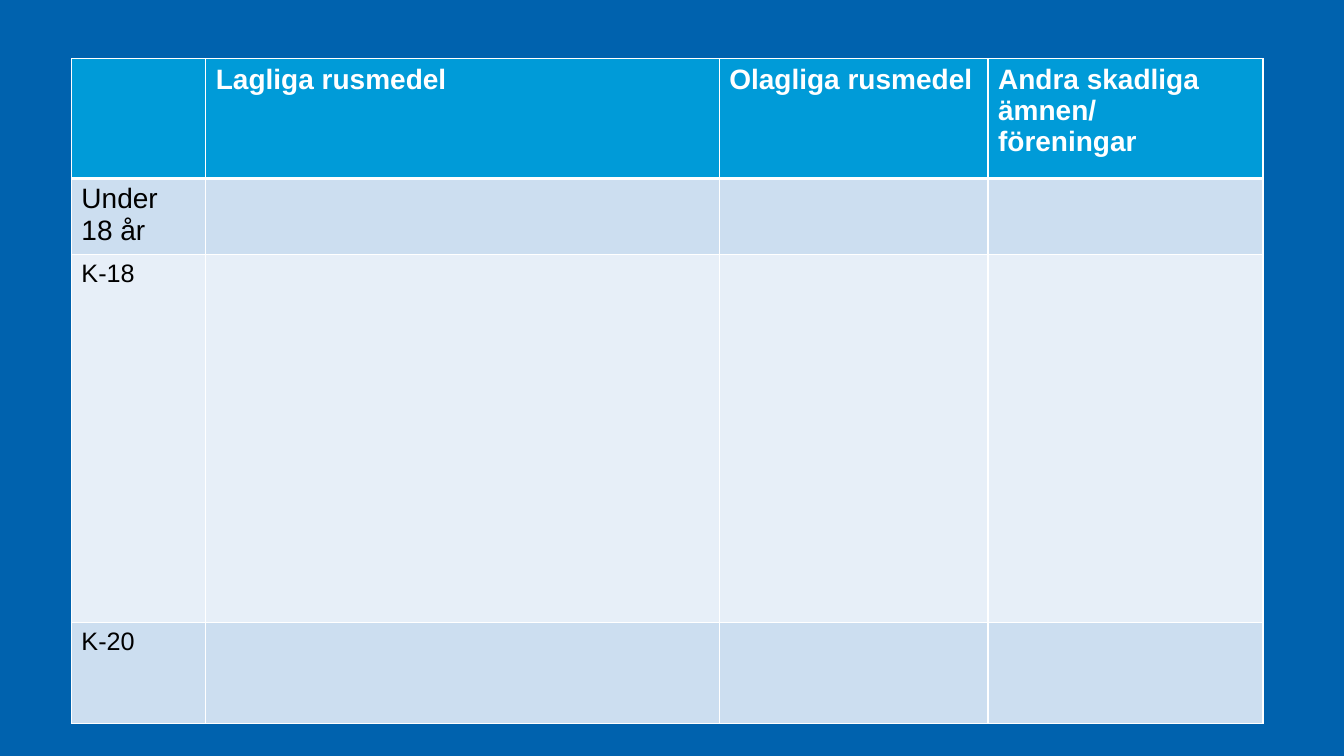
from lxml import etree
from pptx import Presentation
from pptx.dml.color import RGBColor
from pptx.oxml.ns import qn
from pptx.util import Pt

PX = 9525
BLUE = RGBColor(0x00, 0x62, 0xAE)
CYAN = RGBColor(0x00, 0x9B, 0xD8)
PALE = RGBColor(0xCC, 0xDE, 0xF0)
LIGHT = RGBColor(0xE7, 0xEF, 0xF8)
WHITE = RGBColor(0xFF, 0xFF, 0xFF)
BLACK = RGBColor(0x00, 0x00, 0x00)

HEADS = ["", "Lagliga rusmedel", "Olagliga rusmedel", "Andra skadliga ämnen/\nföreningar"]
AGES = [("Under 18 år", 20), ("K-18", 18), ("K-20", 18)]
WIDTHS = [128, 489, 256, 262]
HEIGHTS = [114, 72, 351, 96]


def add_edges(cell, top, bottom):
    props = cell._tc.get_or_add_tcPr()
    edges = [("a:lnL", 1), ("a:lnR", 1), ("a:lnT", top), ("a:lnB", bottom)]
    for spot, (tag, width) in enumerate(edges):
        line = etree.Element(qn(tag), w=str(Pt(width)))
        fill = etree.SubElement(line, qn("a:solidFill"))
        etree.SubElement(fill, qn("a:srgbClr"), val=str(WHITE))
        props.insert(spot, line)


def fill_cell(cell, text, size, ink, back, bold, top, bottom):
    cell.fill.solid()
    cell.fill.fore_color.rgb = back
    add_edges(cell, top, bottom)
    cell.text = text
    for para in cell.text_frame.paragraphs:
        font = para.font
        font.name = "Arial"
        font.size = Pt(size)
        font.bold = bold
        font.color.rgb = ink


def add_grid(slide, left, top):
    box = [left, top, sum(WIDTHS), sum(HEIGHTS)]
    frame = slide.shapes.add_table(len(HEIGHTS), len(WIDTHS), *[v * PX for v in box])
    table = frame.table
    for col, width in zip(table.columns, WIDTHS):
        col.width = width * PX
    for row, height in zip(table.rows, HEIGHTS):
        row.height = height * PX
    for col, head in enumerate(HEADS):
        fill_cell(table.cell(0, col), head, 20, WHITE, CYAN, True, 1, 3)
    for row, (age, size) in enumerate(AGES, 1):
        back = PALE if row % 2 else LIGHT
        edge = 3 if row == 1 else 1
        for col in range(len(WIDTHS)):
            text = "" if col else age
            fill_cell(table.cell(row, col), text, size, BLACK, back, False, edge, 1)


def main():
    deck = Presentation()
    deck.slide_width = 1280 * PX
    deck.slide_height = 720 * PX
    slide = deck.slides.add_slide(deck.slide_layouts[6])
    slide.background.fill.solid()
    slide.background.fill.fore_color.rgb = BLUE
    add_grid(slide, 68, 56)
    deck.save("out.pptx")


if __name__ == "__main__":
    main()
